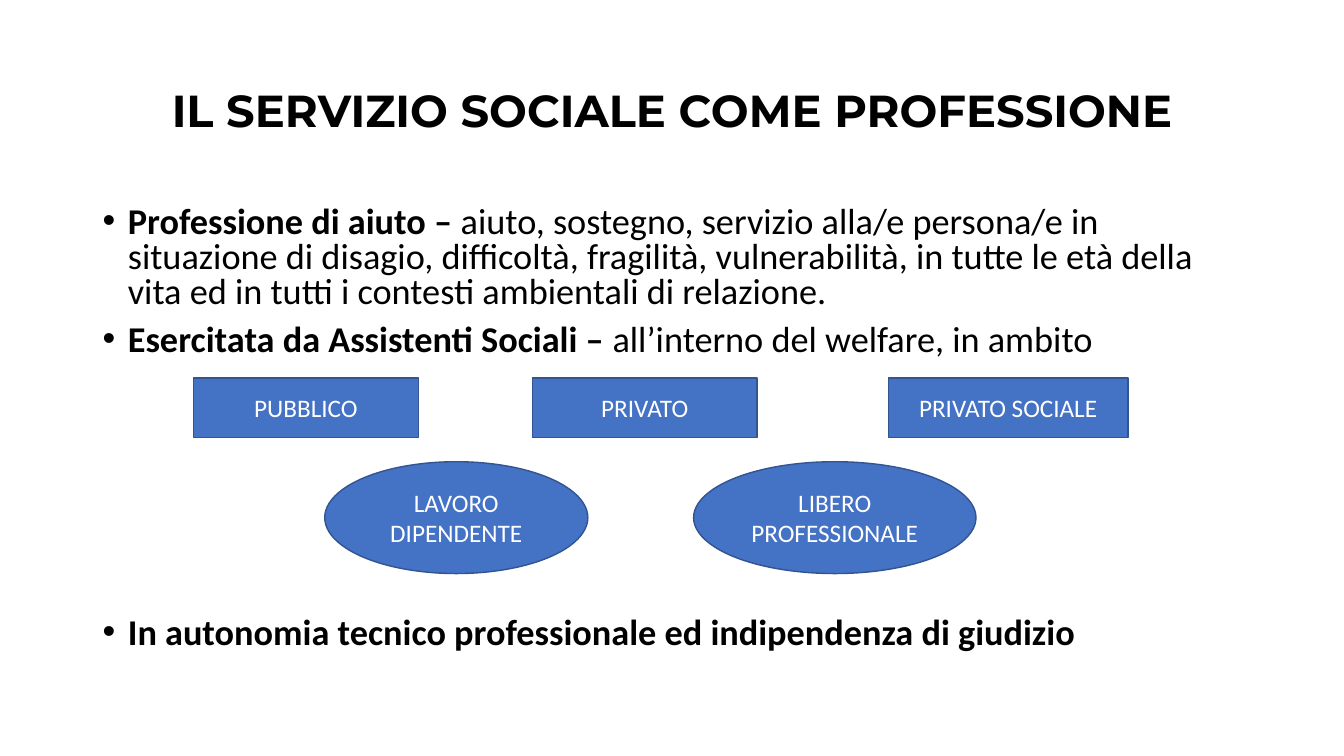
import pptx
import pptx.util
import pptx.dml.color
import pptx.enum.shapes
import pptx.enum.text
import lxml.etree

Pt = pptx.util.Pt
Inches = pptx.util.Inches
Kind = pptx.enum.shapes.MSO_SHAPE
Mid = pptx.enum.text.MSO_ANCHOR.MIDDLE
Center = pptx.enum.text.PP_ALIGN.CENTER

tint = {"ink": "000000", "fill": "4472C4", "edge": "325491", "pale": "FFFFFF"}

deck = pptx.Presentation()
deck.slide_width = Inches(13.33)
deck.slide_height = Inches(7.5)
slide = deck.slides.add_slide(deck.slide_layouts[6])

# Grid of 100 columns by 100 rows
col = deck.slide_width / 100
row = deck.slide_height / 100


def place(x, y, w, h):
    return int(x * col), int(y * row), int(w * col), int(h * row)


def write(para, text, size, hue, bold=False, font="Calibri"):
    run = para.add_run()
    run.text = text
    run.font.size = Pt(size)
    run.font.bold = bold
    run.font.name = font
    run.font.color.rgb = pptx.dml.color.RGBColor.from_string(tint[hue])


# Title
title = slide.shapes.add_textbox(*place(6.9, 5.33, 86.27, 19.33)).text_frame
title.word_wrap = True
title.vertical_anchor = Mid
head = title.paragraphs[0]
head.alignment = Center
head.line_spacing = 0.9
write(head, "IL SERVIZIO SOCIALE COME PROFESSIONE", 32, "ink", True, "Montserrat")

# Bullets: space before, bold lead, plain rest
points = [
    (10, "Professione di aiuto – ",
     "aiuto, sostegno, servizio alla/e persona/e in situazione di disagio, "
     "difficoltà, fragilità, vulnerabilità, in tutte le età della vita ed in "
     "tutti i contesti ambientali di relazione."),
    (10, "Esercitata da Assistenti Sociali – ",
     "all’interno del welfare, in ambito"),
    (184, "In autonomia tecnico professionale ed indipendenza di giudizio", ""),
]
body = slide.shapes.add_textbox(*place(6.9, 26.67, 86.27, 63.47)).text_frame
body.word_wrap = True
for i, (gap, lead, rest) in enumerate(points):
    para = body.add_paragraph() if i else body.paragraphs[0]
    para.line_spacing = 0.8
    para.space_before = Pt(gap)
    write(para, lead, 25.9, "ink", True)
    if rest:
        write(para, rest, 25.9, "ink")
    props = para._p.get_or_add_pPr()
    props.set("marL", str(Inches(0.25)))
    props.set("indent", str(-Inches(0.25)))
    for tag, key, val in [("a:buFont", "typeface", "Arial"),
                          ("a:buChar", "char", "•")]:
        mark = lxml.etree.SubElement(props, pptx.oxml.ns.qn(tag))
        mark.set(key, val)

# Sectors in boxes, kinds of work in ovals
bands = [
    (Kind.RECTANGLE, 50, 7.87, [(14.4, 16.73, "PUBBLICO"),
                                (39.61, 16.73, "PRIVATO"),
                                (66.09, 17.85, "PRIVATO SOCIALE")]),
    (Kind.OVAL, 61.07, 14.8, [(24.16, 19.58, "LAVORO DIPENDENTE"),
                              (51.61, 21.01, "LIBERO PROFESSIONALE")]),
]
for kind, top, high, items in bands:
    for left, wide, name in items:
        box = slide.shapes.add_shape(kind, *place(left, top, wide, high))
        box.shadow.inherit = False
        box.fill.solid()
        box.fill.fore_color.rgb = pptx.dml.color.RGBColor.from_string(tint["fill"])
        box.line.color.rgb = pptx.dml.color.RGBColor.from_string(tint["edge"])
        box.line.width = Pt(1)
        frame = box.text_frame
        frame.word_wrap = True
        frame.vertical_anchor = Mid
        frame.paragraphs[0].alignment = Center
        write(frame.paragraphs[0], name, 18, "pale")

deck.save("out.pptx")
